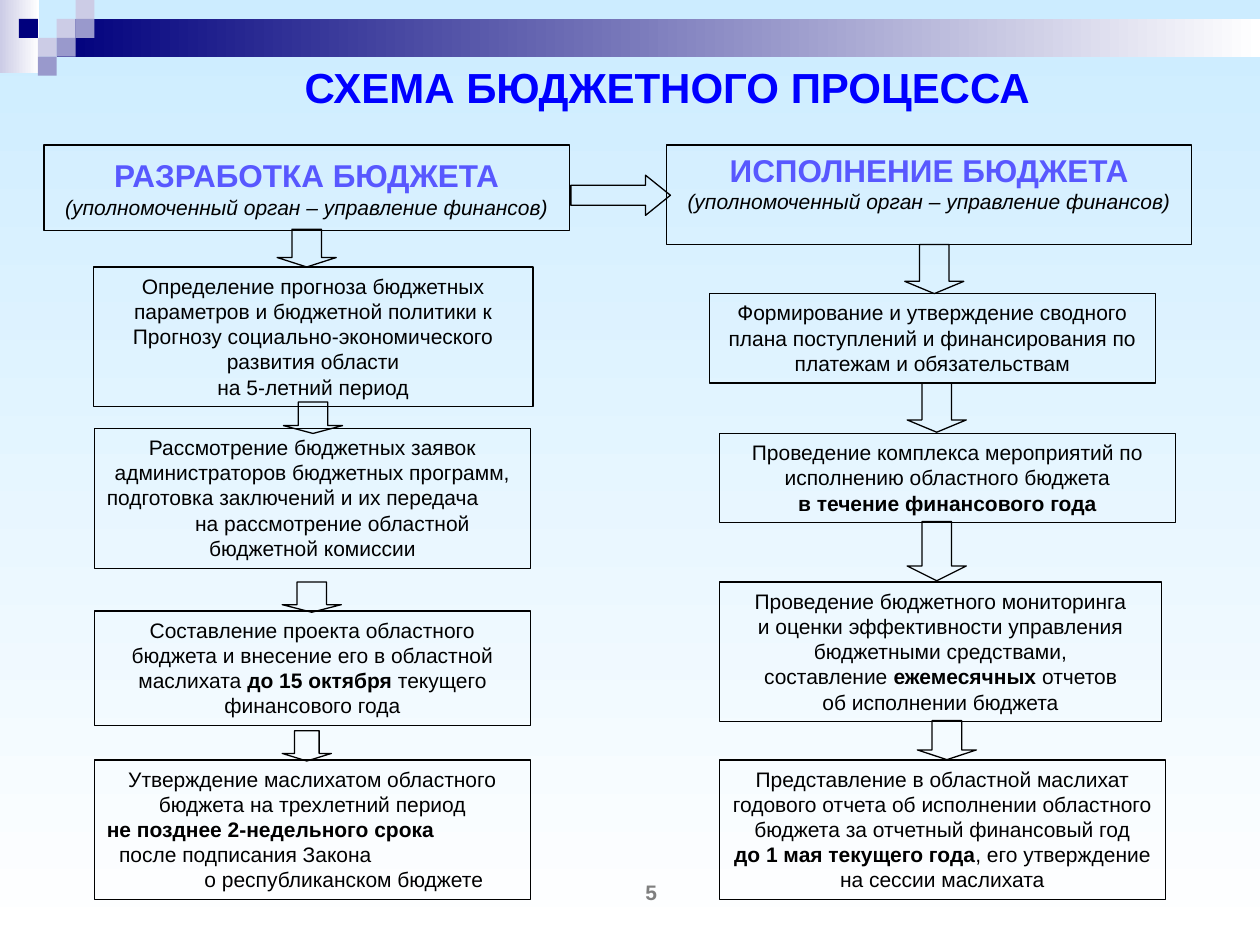
from dataclasses import dataclass

from pptx import Presentation
from pptx.dml.color import RGBColor as RGB
from pptx.enum.shapes import MSO_SHAPE as Shape
from pptx.enum.text import MSO_ANCHOR as Anchor, PP_ALIGN as Align
from pptx.util import Pt


@dataclass(frozen=True)
class Theme:
    font: str = "Arial"
    sky: str = "CCECFF"
    white: str = "FFFFFF"
    navy: str = "00007D"
    lilac: str = "CCCCE6"
    violet: str = "9999CC"
    title: str = "0000FF"
    header: str = "5858FF"
    ink: str = "000000"
    number: str = "7F7F7F"
    title_size: float = 24
    header_size: float = 18
    body_size: float = 12
    line: float = 0.75


@dataclass(frozen=True)
class Box:
    x: float
    y: float
    w: float
    h: float


@dataclass(frozen=True)
class Line:
    """A paragraph; asterisks enclose its bold words."""
    text: str
    align: Align = Align.CENTER
    indent: float = 0
    size: float = 12
    color: str = "000000"
    italic: bool = False


@dataclass(frozen=True)
class Step:
    box: Box
    lines: tuple[Line, ...]


@dataclass(frozen=True)
class Header:
    box: Box
    name: str
    bottom: float = 0


T = Theme()
BODY_INSETS = (7.2, 3.6, 7.2, 3.6)

HEADERS = (
    Header(Box(25.2, 82.8, 300.2, 49), "РАЗРАБОТКА БЮДЖЕТА"),
    Header(Box(380.9, 82.8, 300.2, 56.9), "ИСПОЛНЕНИЕ БЮДЖЕТА", bottom=13.8),
)

STEPS = (
    # Drafting the budget
    Step(Box(53.3, 152.6, 251.3, 79.9), (
        Line("Определение прогноза бюджетных параметров и бюджетной политики к "
             "Прогнозу социально-экономического развития области"),
        Line("на 5-летний период"))),
    Step(Box(54, 244.8, 249.1, 79.9), (
        Line("Рассмотрение бюджетных заявок администраторов бюджетных программ,"),
        Line("подготовка заключений и их передача", Align.LEFT),
        Line("на рассмотрение областной", indent=23),
        Line("бюджетной комиссии"))),
    Step(Box(54, 349.2, 249.1, 65.5), (
        Line("Составление проекта областного бюджета и внесение его в областной "
             "маслихата *до 15 октября *текущего финансового года"),)),
    Step(Box(54, 434.2, 249.1, 79.9), (
        Line("Утверждение маслихатом областного бюджета на трехлетний период"),
        Line("*не позднее 2-недельного срока*", Align.LEFT),
        Line("после подписания Закона", Align.LEFT, indent=7),
        Line("о республиканском бюджете", indent=36))),
    # Executing the budget
    Step(Box(405.4, 167.8, 254.9, 51.1), (
        Line("Формирование и утверждение сводного плана поступлений и "
             "финансирования по платежам и обязательствам"),)),
    Step(Box(411.1, 247.7, 260.6, 51.1), (
        Line("Проведение комплекса мероприятий по исполнению областного бюджета"),
        Line("*в течение финансового года*"))),
    Step(Box(411.1, 332.6, 252.7, 79.9), (
        Line("Проведение бюджетного мониторинга"),
        Line("и оценки эффективности управления бюджетными средствами,"),
        Line("составление *ежемесячных* отчетов"),
        Line("об исполнении бюджета"))),
    Step(Box(411.1, 434.2, 254.9, 79.9), (
        Line("Представление в областной маслихат годового отчета об исполнении "
             "областного бюджета за отчетный финансовый год"),
        Line("*до 1 мая текущего года*, его утверждение на сессии маслихата"))),
)

DOWN_ARROWS = (
    Box(158.4, 131, 33.8, 21.6), Box(162, 229.7, 33.8, 18),
    Box(161.3, 332.6, 33.8, 17.3), Box(161.3, 417.6, 28.1, 17.3),
    Box(517, 139.7, 33.8, 28.1), Box(518.4, 218.9, 33.8, 28.1),
    Box(518.4, 298.1, 33.8, 33.8), Box(524.2, 411.8, 33.8, 22.3),
)

# Corner squares: column, row, colour
CELL = 10.8
SQUARES = ((3, 1, T.lilac), (4, 0, T.lilac), (4, 1, T.violet), (2, 2, T.lilac),
           (1, 1, T.navy), (3, 2, T.violet), (2, 3, T.violet))


def set_gradient(fill, colors: tuple[str, str], angle: float) -> None:
    fill.gradient()
    fill.gradient_angle = angle
    for stop, color in zip(fill.gradient_stops, colors):
        stop.color.rgb = RGB.from_string(color)


def add_shape(s, kind: Shape, box: Box, outlined: bool = True):
    sp = s.shapes.add_shape(kind, Pt(box.x), Pt(box.y), Pt(box.w), Pt(box.h))
    sp.shadow.inherit = False
    sp.fill.background()
    if outlined:
        sp.line.color.rgb = RGB.from_string(T.ink)
        sp.line.width = Pt(T.line)
    else:
        sp.line.fill.background()
    return sp


def write(sp, lines: tuple[Line, ...], insets=BODY_INSETS,
          anchor: Anchor = Anchor.TOP, wrap: bool = True) -> None:
    tf = sp.text_frame
    tf.word_wrap, tf.vertical_anchor = wrap, anchor
    for side, value in zip(("left", "top", "right", "bottom"), insets):
        setattr(tf, f"margin_{side}", Pt(value))
    for i, line in enumerate(lines):
        p = tf.add_paragraph() if i else tf.paragraphs[0]
        p.alignment = line.align
        if line.indent:
            p._p.get_or_add_pPr().set("marL", str(Pt(line.indent)))
        for j, text in enumerate(line.text.split("*")):
            if not text:
                continue
            r = p.add_run()
            r.text = text
            style = {"name": T.font, "size": Pt(line.size),
                     "bold": j % 2 == 1, "italic": line.italic}
            for key, value in style.items():
                setattr(r.font, key, value)
            r.font.color.rgb = RGB.from_string(line.color)


def add_label(s, box: Box, line: Line, anchor: Anchor) -> None:
    sp = s.shapes.add_textbox(Pt(box.x), Pt(box.y), Pt(box.w), Pt(box.h))
    write(sp, (line,), anchor=anchor)


def add_header(s, header: Header) -> None:
    lines = (Line(f"*{header.name}*", size=T.header_size, color=T.header),
             Line("(уполномоченный орган – управление финансов)", italic=True))
    write(add_shape(s, Shape.RECTANGLE, header.box), lines,
          (0, 0, 0, header.bottom), Anchor.MIDDLE, wrap=False)


def add_decor(s) -> None:
    for box, color in ((Box(0, 0, 22.3, 41.8), T.lilac),
                       (Box(3 * CELL, CELL, 720 - 3 * CELL, 2 * CELL), T.navy)):
        sp = add_shape(s, Shape.RECTANGLE, box, outlined=False)
        set_gradient(sp.fill, (color, T.white), 0)
    for col, row, color in SQUARES:
        box = Box(col * CELL, row * CELL, CELL, CELL)
        sp = add_shape(s, Shape.RECTANGLE, box, outlined=False)
        sp.fill.solid()
        sp.fill.fore_color.rgb = RGB.from_string(color)


def main() -> None:
    prs = Presentation()
    prs.slide_width, prs.slide_height = Pt(720), Pt(540)
    s = prs.slides.add_slide(prs.slide_layouts[6])
    set_gradient(s.background.fill, (T.sky, T.white), 270)
    add_decor(s)
    add_label(s, Box(99.4, 31.7, 563.8, 36),
              Line("*СХЕМА БЮДЖЕТНОГО ПРОЦЕССА*", size=T.title_size, color=T.title),
              Anchor.TOP)

    # Flow: headers, steps and the arrows between them
    for header in HEADERS:
        add_header(s, header)
    for step in STEPS:
        write(add_shape(s, Shape.RECTANGLE, step.box), step.lines)
    for box in DOWN_ARROWS:
        add_shape(s, Shape.DOWN_ARROW, box).adjustments[1] = 0.25
    across = add_shape(s, Shape.RIGHT_ARROW, Box(326.2, 100.1, 56.9, 23))
    across.adjustments[1] = 0.62

    # Page number
    add_label(s, Box(300.2, 491.8, 144, 36), Line("*5*", color=T.number), Anchor.MIDDLE)
    prs.save("out.pptx")


if __name__ == "__main__":
    main()
